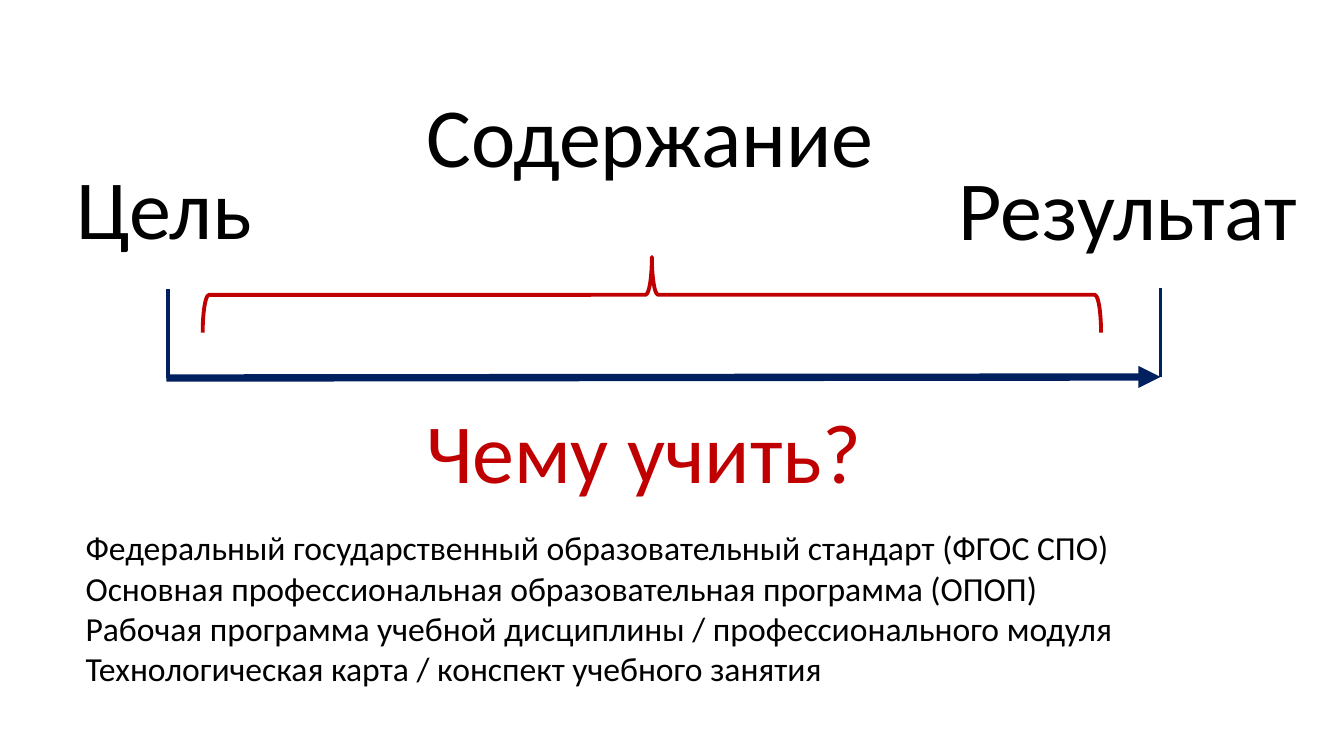
from dataclasses import dataclass

from lxml import etree
from pptx import Presentation
from pptx import util as u
from pptx.dml.color import RGBColor
from pptx.enum import shapes, text
from pptx.oxml import ns

HUES = {"ink": "000000", "navy": "002060", "red": "C00000"}
FONT = "Calibri"


@dataclass
class Label:
    left: float
    top: float
    width: float
    height: float
    lines: tuple[str, ...]
    size: int = 60
    hue: str = "ink"
    wrap: bool = False


@dataclass
class Rule:
    start: tuple[float, float]
    end: tuple[float, float]
    weight: float = 2.75
    arrow: bool = False


RULES = [
    Rule((1.65, 3.75), (11.51, 3.74), 5.25, True),
    Rule((1.67, 3.75), (1.67, 2.87)),
    Rule((11.51, 3.74), (11.51, 2.86)),
]
LABELS = [
    Label(0.66, 1.49, 1.96, 1.11, ("Цель",)),
    Label(4.13, 0.78, 4.68, 1.11, ("Содержание",)),
    Label(9.41, 1.5, 3.59, 1.11, ("Результат",)),
    Label(4.13, 3.91, 4.75, 1.11, ("Чему учить?",), hue="red"),
    Label(0.75, 5.18, 12.15, 1.72, (
        "Федеральный государственный образовательный стандарт (ФГОС СПО)",
        "Основная профессиональная образовательная программа (ОПОП)",
        "Рабочая программа учебной дисциплины / профессионального модуля",
        "Технологическая карта / конспект учебного занятия",
    ), size=24, wrap=True),
]


def tint(hue: str) -> RGBColor:
    return RGBColor.from_string(HUES[hue])


def stroke(line, hue: str, weight: float) -> None:
    line.color.rgb = tint(hue)
    line.width = u.Pt(weight)


def add_rule(slide, rule: Rule) -> None:
    ends = [u.Inches(v) for v in rule.start + rule.end]
    link = slide.shapes.add_connector(shapes.MSO_CONNECTOR.STRAIGHT, *ends)
    stroke(link.line, "navy", rule.weight)
    props = link._element.spPr
    if rule.arrow:
        tip = etree.SubElement(props.find(ns.qn("a:ln")), ns.qn("a:tailEnd"))
        tip.set("type", "triangle")
    etree.SubElement(props, ns.qn("a:effectLst"))


def add_brace(slide) -> None:
    box = [u.Inches(v) for v in (6.09, -1.53, 0.75, 8.91)]
    brace = slide.shapes.add_shape(shapes.MSO_SHAPE.LEFT_BRACE, *box)
    brace.rotation = 90
    brace.shadow.inherit = False
    brace.fill.background()
    stroke(brace.line, "red", 2.75)


def add_label(slide, label: Label) -> None:
    box = [u.Inches(v) for v in (label.left, label.top, label.width, label.height)]
    frame = slide.shapes.add_textbox(*box).text_frame
    frame.word_wrap = label.wrap
    frame.auto_size = text.MSO_AUTO_SIZE.SHAPE_TO_FIT_TEXT
    for row, words in enumerate(label.lines):
        para = frame.add_paragraph() if row else frame.paragraphs[0]
        run = para.add_run()
        run.text = words
        run.font.name = FONT
        run.font.size = u.Pt(label.size)
        run.font.color.rgb = tint(label.hue)


def main() -> None:
    """Build the slide on goal, content and result."""
    deck = Presentation()
    deck.slide_width = u.Inches(13.33)
    deck.slide_height = u.Inches(7.5)
    slide = deck.slides.add_slide(deck.slide_layouts[6])
    for rule in RULES:
        add_rule(slide, rule)
    add_brace(slide)
    for label in LABELS:
        add_label(slide, label)
    deck.save("out.pptx")


if __name__ == "__main__":
    main()
